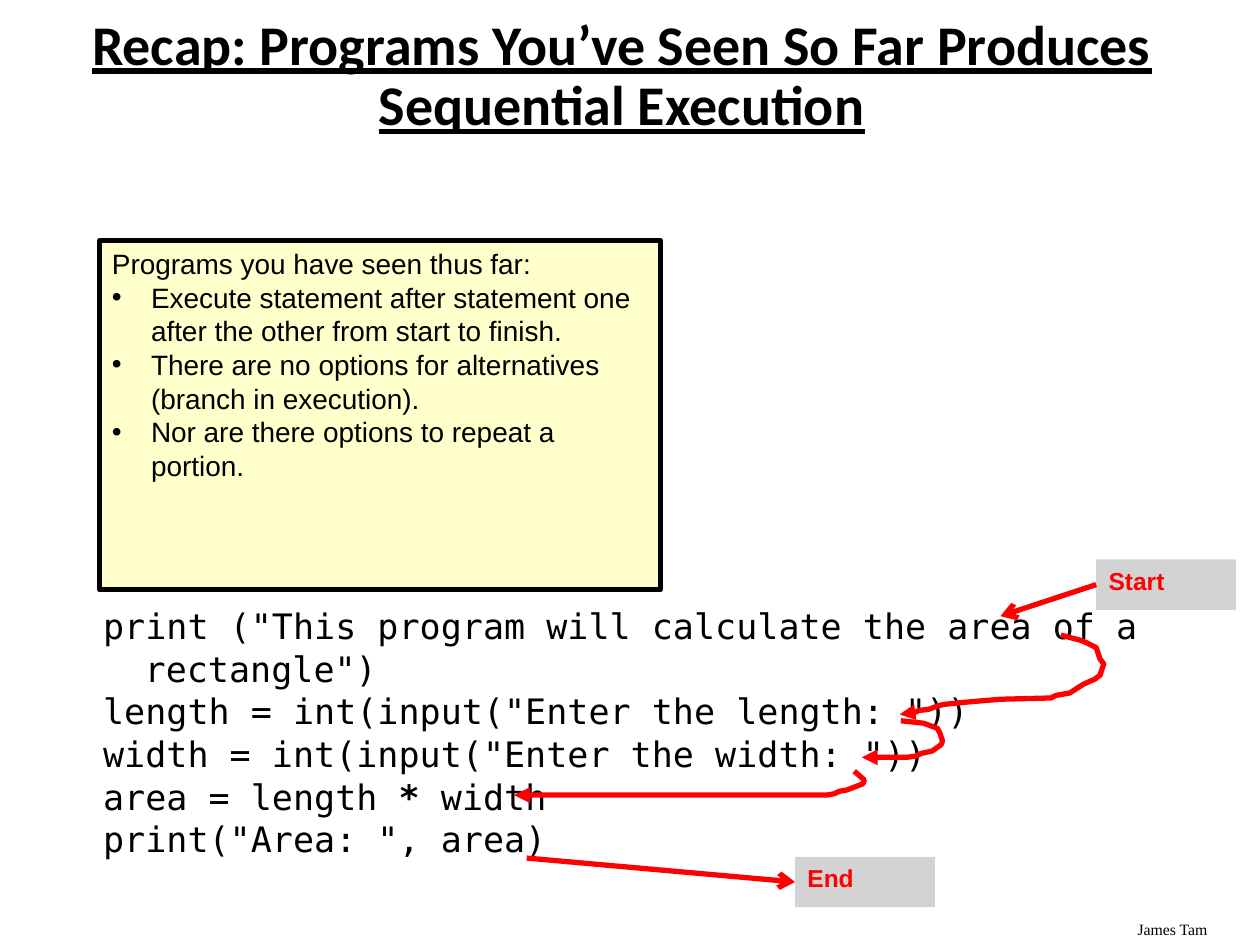
from lxml.etree import SubElement
from pptx import Presentation
from pptx.dml.color import RGBColor
from pptx.enum.shapes import MSO_CONNECTOR as Connector, MSO_SHAPE as Shape
from pptx.enum.text import MSO_ANCHOR as Anchor, MSO_AUTO_SIZE as AutoSize, PP_ALIGN as Align
from pptx.oxml.ns import qn
from pptx.util import Inches, Pt

COLORS = {
    "black": "000000",
    "red": "FF0000",
    "gray": "D3D3D3",
    "cream": "FFFFCC",
}
LABEL_SIZE = (1.11, 0.4)
TITLE_FONT = {"name": "Calibri", "size": Pt(32), "bold": True, "underline": True}
CODE_FONT = {"name": "DejaVu Sans Mono", "size": Pt(20)}
LABEL_FONT = {"name": "Arial", "size": Pt(14), "bold": True}
NOTE_FONT = {"name": "Arial", "size": Pt(16)}
FOOTER_FONT = {"name": "Times New Roman", "size": Pt(9)}
CODE_SPACING = {"line_spacing": 0.9, "space_before": Pt(2.7)}

TITLE = "Recap: Programs You’ve Seen So Far Produces Sequential Execution"
NOTE_HEADING = "Programs you have seen thus far:"
NOTE_BULLETS = [
    "Execute statement after statement one after the other from start to finish.",
    "There are no options for alternatives (branch in execution).",
    "Nor are there options to repeat a portion.",
]
CODE_LINES = [
    (0, [('print ("This program will calculate the area of a', False)]),
    (0.33, [('rectangle")', False)]),
    (0, [('length = int(input("Enter the length: "))', False)]),
    (0, [('width = int(input("Enter the width: "))', False)]),
    (0, [("area = length ", False), ("* ", True), ("width", False)]),
    (0, [('print("Area: ", area)', False)]),
]
FLOW_PATHS = [
    [(8.42, 5.04), (8.49, 5.06), (8.57, 5.08), (8.62, 5.1), (8.7, 5.14), (8.73, 5.23),
     (8.76, 5.27), (8.73, 5.36), (8.69, 5.39), (8.6, 5.43), (8.49, 5.5), (8.38, 5.52),
     (8.34, 5.54), (7.94, 5.55), (7.7, 5.57), (7.5, 5.59), (7.45, 5.6), (7.37, 5.63),
     (7.29, 5.64), (7.25, 5.66), (7.14, 5.67)],
    [(7.15, 5.72), (7.33, 5.74), (7.44, 5.78), (7.46, 5.82), (7.48, 5.88), (7.47, 5.91),
     (7.4, 5.96), (7.31, 5.98), (7.27, 6), (7.2, 6.01), (6.84, 6.01)],
    [(6.78, 6.12), (6.86, 6.19), (6.85, 6.22), (6.72, 6.27), (6.66, 6.28), (6.62, 6.3),
     (6.56, 6.31), (4.08, 6.31)],
]


def color(name):
    return RGBColor.from_string(COLORS[name])


def apply(target, values):
    for name, value in values.items():
        setattr(target, name, value)


def add_run(paragraph, text, font, color_name="black"):
    run = paragraph.add_run()
    run.text = text
    apply(run.font, font)
    run.font.color.rgb = color(color_name)
    return run


def set_indent(paragraph, left, first=0):
    properties = paragraph._p.get_or_add_pPr()
    properties.set("marL", str(Inches(left)))
    properties.set("indent", str(Inches(first)))
    return properties


def add_title(slide):
    title = slide.shapes.title
    apply(title, {"left": Inches(0.47), "top": Inches(0.33),
                  "width": Inches(8.93), "height": Inches(0.57)})
    apply(title.text_frame, {"vertical_anchor": Anchor.MIDDLE, "word_wrap": True,
                             "auto_size": AutoSize.NONE})
    paragraph = title.text_frame.paragraphs[0]
    apply(paragraph, {"alignment": Align.CENTER, "line_spacing": 0.9})
    add_run(paragraph, TITLE, TITLE_FONT)


def add_text_box(slide, left, top, width, height):
    box = slide.shapes.add_textbox(Inches(left), Inches(top), Inches(width), Inches(height))
    box.text_frame.word_wrap = True
    return box.text_frame


def add_code(slide):
    frame = add_text_box(slide, 0.72, 4.79, 8.69, 2.2)
    for index, (indent, pieces) in enumerate(CODE_LINES):
        paragraph = frame.add_paragraph() if index else frame.paragraphs[0]
        apply(paragraph, CODE_SPACING)
        set_indent(paragraph, indent)
        for text, bold in pieces:
            add_run(paragraph, text, {**CODE_FONT, "bold": bold})


def add_rectangle(slide, left, top, width, height, fill):
    rectangle = slide.shapes.add_shape(
        Shape.RECTANGLE, Inches(left), Inches(top), Inches(width), Inches(height))
    rectangle.shadow.inherit = False
    rectangle.fill.solid()
    rectangle.fill.fore_color.rgb = color(fill)
    rectangle.line.fill.background()
    apply(rectangle.text_frame, {"vertical_anchor": Anchor.TOP, "word_wrap": True})
    rectangle.text_frame.paragraphs[0].alignment = Align.LEFT
    return rectangle


def add_label(slide, text, left, top):
    label = add_rectangle(slide, left, top, *LABEL_SIZE, "gray")
    add_run(label.text_frame.paragraphs[0], text, LABEL_FONT, "red")
    return label


def add_note(slide):
    note = add_rectangle(slide, 0.79, 1.91, 4.45, 2.77, "cream")
    note.line.color.rgb = color("black")
    note.line.width = Pt(3)
    frame = note.text_frame
    add_run(frame.paragraphs[0], NOTE_HEADING, NOTE_FONT)
    for text in NOTE_BULLETS:
        paragraph = frame.add_paragraph()
        paragraph.alignment = Align.LEFT
        properties = set_indent(paragraph, 0.31, -0.31)
        SubElement(properties, qn("a:buFont"), typeface="Arial")
        SubElement(properties, qn("a:buChar"), char="•")
        add_run(paragraph, text, NOTE_FONT)


def style_arrow(shape, head):
    shape.line.color.rgb = color("red")
    shape.line.width = Pt(3)
    line = shape.line._get_or_add_ln()
    SubElement(line, qn("a:round"))
    SubElement(line, qn("a:tailEnd"), type=head)


def add_arrow(slide, start, end):
    arrow = slide.shapes.add_connector(
        Connector.STRAIGHT, *(Inches(value) for value in (*start, *end)))
    style_arrow(arrow, "arrow")
    SubElement(arrow._element.spPr, qn("a:effectLst"))
    return arrow


def add_flow_path(slide, points):
    first, *others = [(Inches(x), Inches(y)) for x, y in points]
    builder = slide.shapes.build_freeform(*first)
    builder.add_line_segments(others, close=False)
    flow = builder.convert_to_shape()
    flow.fill.background()
    flow.shadow.inherit = False
    style_arrow(flow, "triangle")


def main():
    presentation = Presentation()
    presentation.slide_width = Inches(10)
    presentation.slide_height = Inches(7.5)
    slide = presentation.slides.add_slide(presentation.slide_layouts[5])

    footer = add_text_box(slide, 8.93, 7.25, 1, 0.25)
    add_run(footer.paragraphs[0], "James Tam", FOOTER_FONT)
    add_title(slide)
    add_code(slide)

    start_label = add_label(slide, "Start", 8.7, 4.44)
    start_arrow = add_arrow(slide, (8.7, 4.64), (7.94, 4.89))
    start_arrow.begin_connect(start_label, 1)
    for points in FLOW_PATHS:
        add_flow_path(slide, points)
    end_label = add_label(slide, "End", 6.31, 6.8)
    end_arrow = add_arrow(slide, (4.18, 6.81), (6.31, 7))
    end_arrow.end_connect(end_label, 1)
    add_note(slide)

    presentation.save("out.pptx")


if __name__ == "__main__":
    main()
